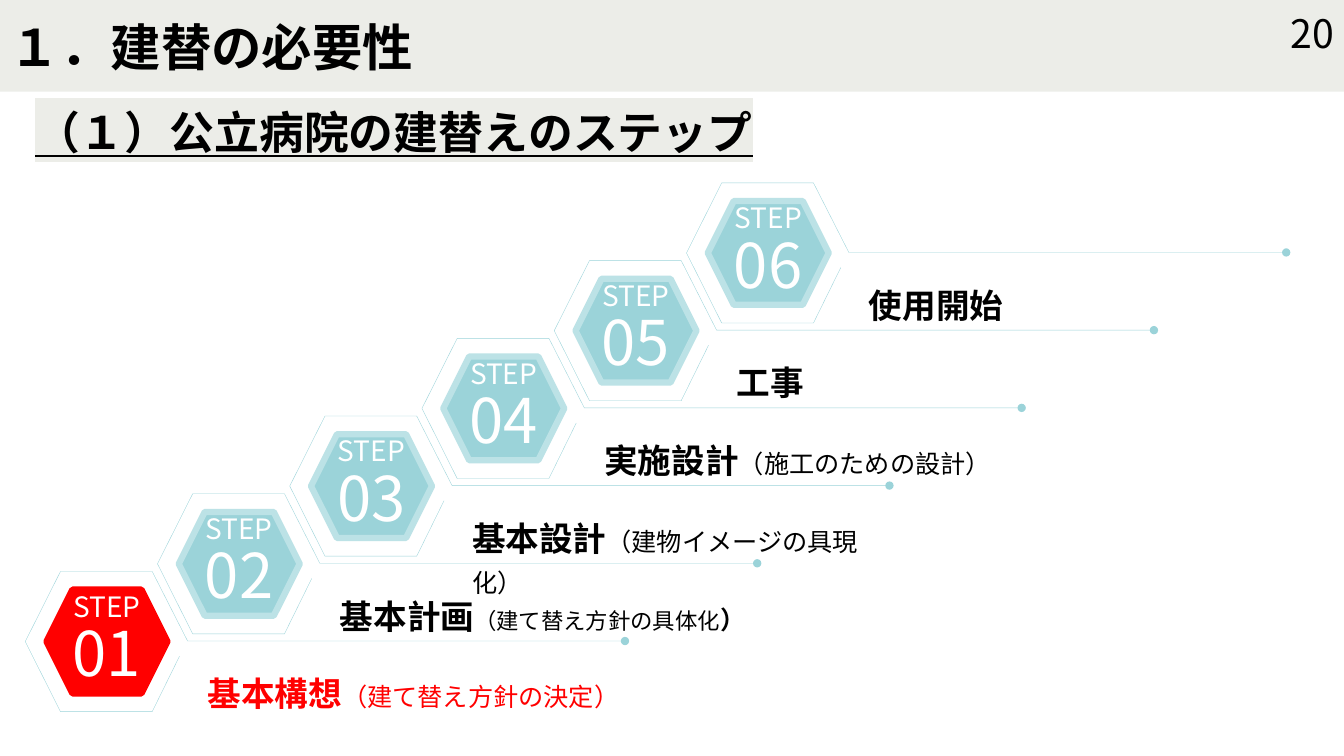
from lxml.etree import SubElement
from pptx import Presentation
from pptx.dml.color import RGBColor
from pptx.enum.shapes import MSO_SHAPE as Kind
from pptx.enum.text import MSO_ANCHOR as Anchor, MSO_AUTO_SIZE as Fit, PP_ALIGN as Align
from pptx.oxml.ns import qn
from pptx.util import Inches, Pt

BLACK = RGBColor(0x00, 0x00, 0x00)
WHITE = RGBColor(0xFF, 0xFF, 0xFF)
RED = RGBColor(0xFF, 0x00, 0x00)
TEAL = RGBColor(0x9B, 0xD3, 0xD9)
PALE = RGBColor(0xBC, 0xE2, 0xE6)
GREY = RGBColor(0xEC, 0xED, 0xE8)

# All lengths are percent of the slide's width and height.
START = (1.88, 75.6)
RISE = (9.84, 10.28)
TRACK = [(11.48, 11.2), (9.45, 18.53), (2.62, 18.53), (0, 9.27),
         (2.62, 0), (9.45, 0), (12.08, 9.2), (44.62, 9.2)]

HEAD = dict(size=Pt(24), bold=True)
NOTE = dict(size=Pt(18), bold=False)
SMALL = dict(size=Pt(16), bold=False)
STEPS = [
    [("基本構想", HEAD), ("（建て替え方針の決定）", NOTE)],
    [("基本計画", HEAD), ("（建て替え方針の具体化", SMALL), ("）", dict(size=Pt(18), bold=True))],
    [("基本設計", HEAD), ("（建物イメージの具現化）", NOTE)],
    [("実施設計", HEAD), ("（施工のための設計）", NOTE)],
    [("工事", HEAD)],
    [("使用開始", HEAD)],
]


def apply(target, values):
    for name, value in values.items():
        setattr(target, name, value)


class Board:
    font = "Noto Sans CJK JP"

    def __init__(self, deck):
        self.wide, self.high = deck.slide_width, deck.slide_height
        self.slide = deck.slides.add_slide(deck.slide_layouts[6])
        self.shapes = self.slide.shapes

    def spot(self, x, y):
        return round(self.wide * x / 100), round(self.high * y / 100)

    def letter(self, shape, paras, color, frame, para):
        """Fill the shape with paragraphs, each a list of (text, font values)."""
        box = shape.text_frame
        apply(box, frame)
        for i, runs in enumerate(paras):
            line = box.add_paragraph() if i else box.paragraphs[0]
            apply(line, para)
            for text, style in runs:
                run = line.add_run()
                run.text = text
                run.font.color.rgb = color
                apply(run.font, {"name": self.font, **style})
                SubElement(run.font._element, qn("a:ea"), typeface=self.font)

    def text(self, area, runs, color=BLACK, frame={}, para={}):
        box = self.shapes.add_textbox(*self.spot(*area[:2]), *self.spot(*area[2:]))
        self.letter(box, [runs], color, {"word_wrap": True, **frame}, para)
        return box

    def block(self, kind, area, fill, edge=None):
        shape = self.shapes.add_shape(kind, *self.spot(*area[:2]), *self.spot(*area[2:]))
        shape.shadow.inherit = False
        shape.fill.solid()
        shape.fill.fore_color.rgb = fill
        if edge is None:
            shape.line.fill.background()
        else:
            shape.line.color.rgb = edge
            shape.line.width = Pt(4.5)
        return shape

    def track(self, points):
        """Draw an open thin line that ends in a dot."""
        first, *rest = [self.spot(*point) for point in points]
        pen = self.shapes.build_freeform(*first)
        pen.add_line_segments(rest, close=False)
        shape = pen.convert_to_shape()
        shape.shadow.inherit = False
        shape.fill.background()
        shape.line.color.rgb = TEAL
        shape.line.width = Pt(0.25)
        edge = shape._element.spPr.find(qn("a:ln"))
        SubElement(edge, qn("a:tailEnd"), type="oval")

    def step(self, i, label):
        x, y = START[0] + i * RISE[0], START[1] - i * RISE[1]
        fill, edge, ink = (TEAL, PALE, BLACK) if i else (RED, RED, RED)
        badge = self.block(Kind.HEXAGON, (x + 1.58, y + 2.4, 9, 13.73), fill, edge)
        self.letter(badge, [[("STEP", dict(size=Pt(20)))], [(f"{i + 1:02}", dict(size=Pt(44)))]],
                    WHITE, dict(word_wrap=False, vertical_anchor=Anchor.MIDDLE),
                    dict(alignment=Align.CENTER, line_spacing=0.9))
        self.track([(x + dx, y + dy) for dx, dy in TRACK])
        self.text((x + 12.83, y + 11.2, 33, 7.87), label, ink,
                  dict(auto_size=Fit.SHAPE_TO_FIT_TEXT),
                  dict(line_spacing=1.3, space_after=Pt(6)))


def mark(box, color):
    """Highlight the text of every run in the box."""
    for run in box.text_frame.paragraphs[0].runs:
        light = SubElement(run.font._element, qn("a:highlight"))
        SubElement(light, qn("a:srgbClr"), val=str(color))
        run.font._element.find(qn("a:solidFill")).addnext(light)


def main():
    deck = Presentation()
    deck.slide_width, deck.slide_height = Inches(13.33), Inches(7.5)
    board = Board(deck)
    middle = dict(vertical_anchor=Anchor.MIDDLE)

    banner = board.block(Kind.RECTANGLE, (0, 0, 100, 12.13), GREY)
    board.letter(banner, [[("１．建替の必要性", dict(size=Pt(36), bold=True))]], BLACK,
                 middle, dict(alignment=Align.LEFT))
    board.text((75.6, 1.73, 24.4, 5.33), [("20", dict(size=Pt(28)))],
               frame=middle, para=dict(alignment=Align.RIGHT))
    topic = board.text((1.88, 13.2, 96.2, 8.53),
                       [("（１）公立病院の建替えのステップ",
                         dict(size=Pt(32), bold=True, underline=True))],
                       frame=dict(auto_size=Fit.SHAPE_TO_FIT_TEXT))
    mark(topic, GREY)

    for i, label in enumerate(STEPS):
        board.step(i, label)
    deck.save("out.pptx")


if __name__ == "__main__":
    main()
